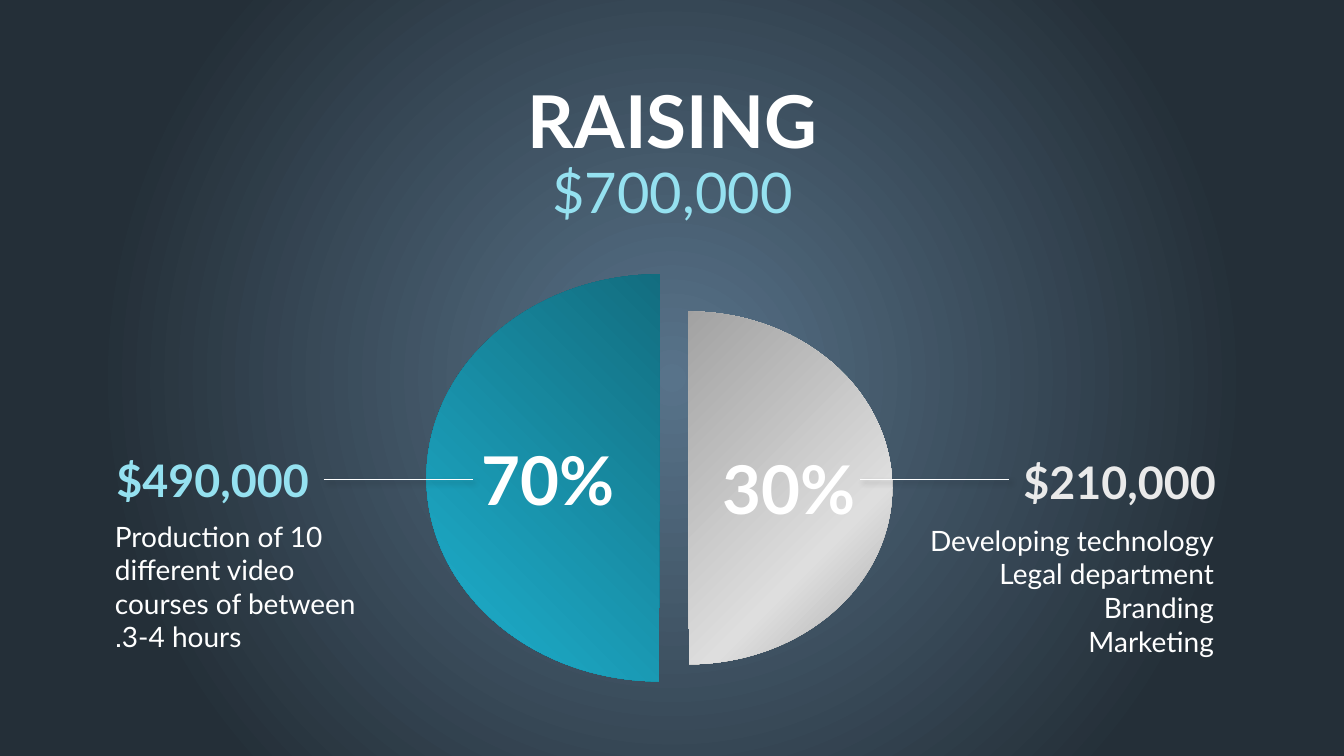
from lxml.etree import fromstring
from pptx import Presentation
from pptx.dml.color import RGBColor
from pptx.enum.shapes import MSO_CONNECTOR, MSO_SHAPE
from pptx.enum.text import MSO_ANCHOR, MSO_AUTO_SIZE, PP_ALIGN
from pptx.oxml.ns import qn
from pptx.util import Inches, Pt

INK = {"white": "FFFFFF", "aqua": "95E1F0", "pale": "EAEAEA", "black": "000000",
       "glow": "5D7991", "steel": "58738A", "night": "242F38",
       "gray": "A6A6A6", "silver": "DEDEDE", "dusk": "808080",
       "deep": "116475", "teal": "1EB2D0"}
NS = 'xmlns:a="http://schemas.openxmlformats.org/drawingml/2006/main"'


class Deck:
    def __init__(self, slide, font):
        self.slide = slide
        self.font = font

    def blend(self, root, stops, kind):
        """Swap the gradient below root for one with these (percent, colour) stops."""
        marks = "".join(f'<a:gs pos="{pos * 1000}"><a:srgbClr val="{INK[ink]}"/></a:gs>'
                        for pos, ink in stops)
        old = root.find(".//" + qn("a:gradFill"))
        new = fromstring(f'<a:gradFill {NS} rotWithShape="1"><a:gsLst>{marks}</a:gsLst>{kind}</a:gradFill>')
        old.getparent().replace(old, new)

    def shade(self):
        """Return a soft shadow falling to the lower right."""
        return fromstring(
            f'<a:effectLst {NS}><a:outerShdw blurRad="{Pt(4)}" dist="{Pt(3)}" dir="2700000" '
            f'algn="tl" rotWithShape="0"><a:srgbClr val="{INK["black"]}">'
            '<a:alpha val="40000"/></a:srgbClr></a:outerShdw></a:effectLst>')

    def backdrop(self, stops):
        self.slide.background.fill.gradient()
        self.blend(self.slide._element, stops,
                   '<a:path path="circle"><a:fillToRect l="50000" t="50000" r="50000" b="50000"/></a:path>')

    def half(self, box, stops, angle, flip=False):
        """Draw a filled half disc, the right half unless flipped."""
        arc = self.slide.shapes.add_shape(MSO_SHAPE.ARC, *map(Inches, box))
        arc.adjustments[0], arc.adjustments[1] = 161.9, 53.9
        arc.shadow.inherit = False
        arc.line.fill.background()
        arc.fill.gradient()
        self.blend(arc._element, stops, f'<a:lin ang="{angle * 60000}" scaled="0"/>')
        if flip:
            arc._element.spPr.find(qn("a:xfrm")).set("flipH", "1")

    def line(self, left, right, y):
        rule = self.slide.shapes.add_connector(
            MSO_CONNECTOR.STRAIGHT, *map(Inches, (left, y, right, y)))
        rule.line.color.rgb = RGBColor.from_string(INK["white"])
        rule.line.width = Pt(0.75)
        rule._element.spPr.append(self.shade())

    def text(self, box, lines, size, ink="white", bold=False, align=None, pads=(0.13,) * 4,
             anchor=MSO_ANCHOR.MIDDLE, space=1.0, slot=None, rtl=False, shade=False):
        """Write lines into a placeholder slot, or into a new text box."""
        shape = self.slide.shapes.add_textbox(0, 0, 0, 0) if slot is None else self.slide.placeholders[slot]
        for name, value in zip(("left", "top", "width", "height"), box):
            setattr(shape, name, Inches(value))
        frame = shape.text_frame
        look = {"word_wrap": True, "auto_size": MSO_AUTO_SIZE.NONE, "vertical_anchor": anchor}
        sides = ("margin_left", "margin_top", "margin_right", "margin_bottom")
        look.update(zip(sides, map(Inches, pads)))
        for name, value in look.items():
            setattr(frame, name, value)
        frame.text = "\n".join(lines)
        for para in frame.paragraphs:
            form = {"alignment": align, "line_spacing": space, "space_before": Pt(0), "level": int(rtl)}
            for name, value in form.items():
                setattr(para, name, value)
            if rtl:
                props = para._p.get_or_add_pPr()
                for name, value in {"rtl": "1", "marL": str(Inches(0.5)), "indent": "0"}.items():
                    props.set(name, value)
                props.append(fromstring(f"<a:buNone {NS}/>"))
            run = para.runs[0]
            for name, value in {"name": self.font, "size": Pt(size), "bold": bold}.items():
                setattr(run.font, name, value)
            run.font.color.rgb = RGBColor.from_string(INK[ink])
            if shade:
                run._r.rPr.find(qn("a:solidFill")).addnext(self.shade())


def main():
    show = Presentation()
    show.slide_width, show.slide_height = Inches(13.33), Inches(7.5)
    deck = Deck(show.slides.add_slide(show.slide_layouts[3]), "Lato")
    mid = PP_ALIGN.CENTER
    deck.backdrop([(0, "glow"), (0, "steel"), (75, "night")])

    head = {"align": mid, "pads": (0.1,) * 4, "space": 0.9}
    deck.text((0.92, 0.81, 11.5, 0.85), ["RAISING"], 52, bold=True, slot=0, **head)
    deck.text((0.92, 1.51, 11.5, 0.85), ["$700,000"], 40, "aqua", **head)

    deck.half((4.81, 3.09, 4.04, 3.5), [(0, "gray"), (24, "silver"), (100, "dusk")], 225)
    deck.half((4.23, 2.72, 4.62, 4.04), [(17, "deep"), (100, "teal"), (100, "deep")], 45, flip=True)
    deck.text((6.8, 4.48, 2.05, 0.72), ["30%"], 48, bold=True, align=mid)
    deck.text((4.45, 4.33, 1.98, 0.84), ["70%"], 48, bold=True, align=mid, shade=True)

    for left in (3.21, 8.53):
        deck.line(left, left + 1.48, 4.76)
    deck.text((1, 4.2, 2.22, 1.12), ["$490,000"], 32, "aqua", True, mid)
    deck.text((10.02, 4.22, 2.28, 1.12), ["$210,000"], 32, "pale", True)

    note = {"size": 20, "anchor": MSO_ANCHOR.TOP, "rtl": True}
    deck.text((1.01, 5.08, 3.2, 1.59),
              ["Production of 10 different video courses of between 3-4 hours."],
              slot=1, pads=(0.13, 0.07, 0.13, 0.07), **note)
    deck.text((8.85, 5.12, 3.69, 1.59),
              ["Developing technology", "Legal department", "Branding", "Marketing"],
              slot=2, pads=(0.13, 0.07, 0, 0.07), align=PP_ALIGN.RIGHT, **note)
    show.save("out.pptx")


if __name__ == "__main__":
    main()
